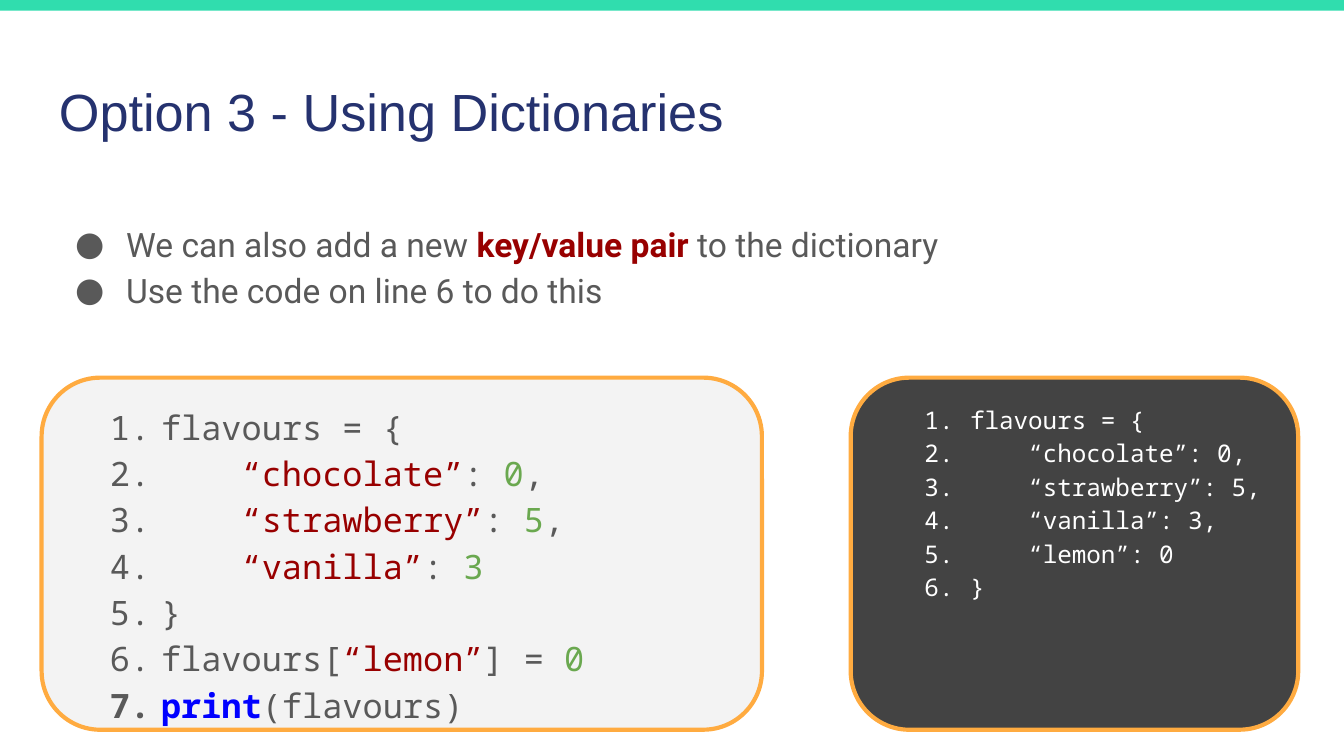
from dataclasses import dataclass

from lxml.etree import SubElement
from pptx import Presentation
from pptx.dml.color import RGBColor
from pptx.enum.shapes import MSO_SHAPE
from pptx.enum.text import MSO_ANCHOR
from pptx.oxml.ns import qn
from pptx.slide import Slide
from pptx.util import Inches, Pt

SLIDE_WIDTH = Inches(10)
SLIDE_HEIGHT = SLIDE_WIDTH * 9 // 16
CELL = SLIDE_WIDTH // 100  # side of a square grid cell

WHITE = RGBColor(0xFF, 0xFF, 0xFF)
TEAL = RGBColor(0x30, 0xDD, 0xAE)
NAVY = RGBColor(0x25, 0x32, 0x6F)
GREY = RGBColor(0x59, 0x59, 0x59)
RED = RGBColor(0x98, 0x00, 0x00)
GREEN = RGBColor(0x6A, 0xA8, 0x4F)
BLUE = RGBColor(0x00, 0x00, 0xFF)
ORANGE = RGBColor(0xFF, 0xAB, 0x40)
PALE = RGBColor(0xF3, 0xF3, 0xF3)
CHARCOAL = RGBColor(0x43, 0x43, 0x43)

MONO_ADVANCE = 0.6  # character width as a share of the font size
CODE_INDENT = 4  # characters


@dataclass(frozen=True)
class Area:
    """A place on the grid, in columns and rows."""
    column: float
    row: float
    columns: float
    rows: float

    def lengths(self) -> tuple[int, ...]:
        return tuple(round(cells * CELL) for cells in (
            self.column, self.row, self.columns, self.rows))


@dataclass(frozen=True)
class Span:
    text: str
    color: RGBColor
    bold: bool = False


@dataclass(frozen=True)
class Line:
    spans: tuple[Span, ...]
    indented: bool = False


@dataclass(frozen=True)
class Style:
    font: str
    size: float
    color: RGBColor
    margin: float = 0
    hanging: float = 0
    spacing: float = 1
    marker: tuple[str, str, str] | None = None


BULLET = ("a:buChar", "char", "●")
NUMBER = ("a:buAutoNum", "type", "arabicPeriod")

TITLE = Style("Arial", 28, NAVY)
BODY = Style("Roboto", 18, GREY, 0.5, 0.38, 1.15, BULLET)
CODE = Style("Noto Sans Mono", 18, GREY, 0.79, 0.38, 1.15, NUMBER)
OUTPUT = Style("Noto Sans Mono", 13, WHITE, 0.79, 0.34, 1.15, NUMBER)


def plain(text: str, color: RGBColor, indented: bool = False) -> Line:
    return Line((Span(text, color),), indented)


def entry(key: str, value: str, ending: str = "") -> Line:
    """One indented, highlighted key and value of the dictionary."""
    return Line((Span(f"“{key}”", RED), Span(": ", GREY), Span(value, GREEN))
                + ((Span(ending, GREY),) if ending else ()), indented=True)


BODY_LINES = [
    Line((Span("We can also add a new ", GREY),
          Span("key/value pair ", RED, bold=True),
          Span("to the dictionary", GREY))),
    plain("Use the code on line 6 to do this", GREY),
]
CODE_LINES = [
    plain("flavours = {", GREY),
    entry("chocolate", "0", ","),
    entry("strawberry", "5", ","),
    entry("vanilla", "3"),
    plain("}", GREY),
    Line((Span("flavours[", GREY), Span("“lemon”", RED),
          Span("] = ", GREY), Span("0", GREEN))),
    Line((Span("print", BLUE, bold=True), Span("(flavours)", GREY))),
]
OUTPUT_LINES = [
    plain("flavours = {", WHITE),
    *(plain(text, WHITE, indented=True) for text in (
        "“chocolate”: 0,", "“strawberry”: 5,", "“vanilla”: 3,", "“lemon”: 0")),
    plain("}", WHITE),
]


def mark_paragraph(paragraph, style: Style, indented: bool) -> None:
    """Hang the bullet or number, keeping it in place when the text is indented."""
    tag, attribute, value = style.marker
    extra = CODE_INDENT * MONO_ADVANCE * style.size / 72 if indented else 0
    properties = paragraph._p.get_or_add_pPr()
    properties.set("marL", str(Inches(style.margin + extra)))
    properties.set("indent", str(-Inches(style.hanging + extra)))
    color = SubElement(properties, qn("a:buClr"))
    SubElement(color, qn("a:srgbClr")).set("val", str(style.color))
    SubElement(properties, qn("a:buFont")).set("typeface", style.font)
    SubElement(properties, qn(tag)).set(attribute, value)


def add_text(page: Slide, area: Area, lines: list[Line], style: Style) -> None:
    frame = page.shapes.add_textbox(*area.lengths()).text_frame
    frame.word_wrap = True
    frame.vertical_anchor = MSO_ANCHOR.TOP
    frame.margin_left = frame.margin_right = Inches(0.1)
    frame.margin_top = frame.margin_bottom = Inches(0.1)
    for index, line in enumerate(lines):
        paragraph = frame.add_paragraph() if index else frame.paragraphs[0]
        paragraph.line_spacing = style.spacing
        if style.marker:
            mark_paragraph(paragraph, style, line.indented)
        for span in line.spans:
            run = paragraph.add_run()
            run.text = span.text
            run.font.name = style.font
            run.font.size = Pt(style.size)
            run.font.bold = span.bold
            run.font.color.rgb = span.color


def add_panel(page: Slide, area: Area, kind: MSO_SHAPE, fill: RGBColor,
              outline: RGBColor | None = None) -> None:
    panel = page.shapes.add_shape(kind, *area.lengths())
    panel.shadow.inherit = False
    panel.fill.solid()
    panel.fill.fore_color.rgb = fill
    if outline is None:
        panel.line.fill.background()
    else:
        panel.line.color.rgb = outline
        panel.line.width = Pt(2.25)


def main() -> None:
    deck = Presentation()
    deck.slide_width, deck.slide_height = SLIDE_WIDTH, SLIDE_HEIGHT
    page = deck.slides.add_slide(deck.slide_layouts[6])

    add_text(page, Area(3.4, 4.9, 93.2, 6.3),
             [plain("Option 3 - Using Dictionaries", NAVY)], TITLE)
    add_panel(page, Area(-0.1, 0, 100.2, 0.8), MSO_SHAPE.RECTANGLE, TEAL)
    add_text(page, Area(3.4, 15.2, 93.2, 8.5), BODY_LINES, BODY)

    add_panel(page, Area(3.1, 28.1, 53.6, 26.2),
              MSO_SHAPE.ROUNDED_RECTANGLE, PALE, ORANGE)
    add_text(page, Area(3.1, 28.8, 54.3, 25.5), CODE_LINES, CODE)
    add_panel(page, Area(63.3, 28.1, 33.3, 26.2),
              MSO_SHAPE.ROUNDED_RECTANGLE, CHARCOAL, ORANGE)
    add_text(page, Area(63.3, 28.8, 32.9, 25.5), OUTPUT_LINES, OUTPUT)

    deck.save("out.pptx")


if __name__ == "__main__":
    main()
